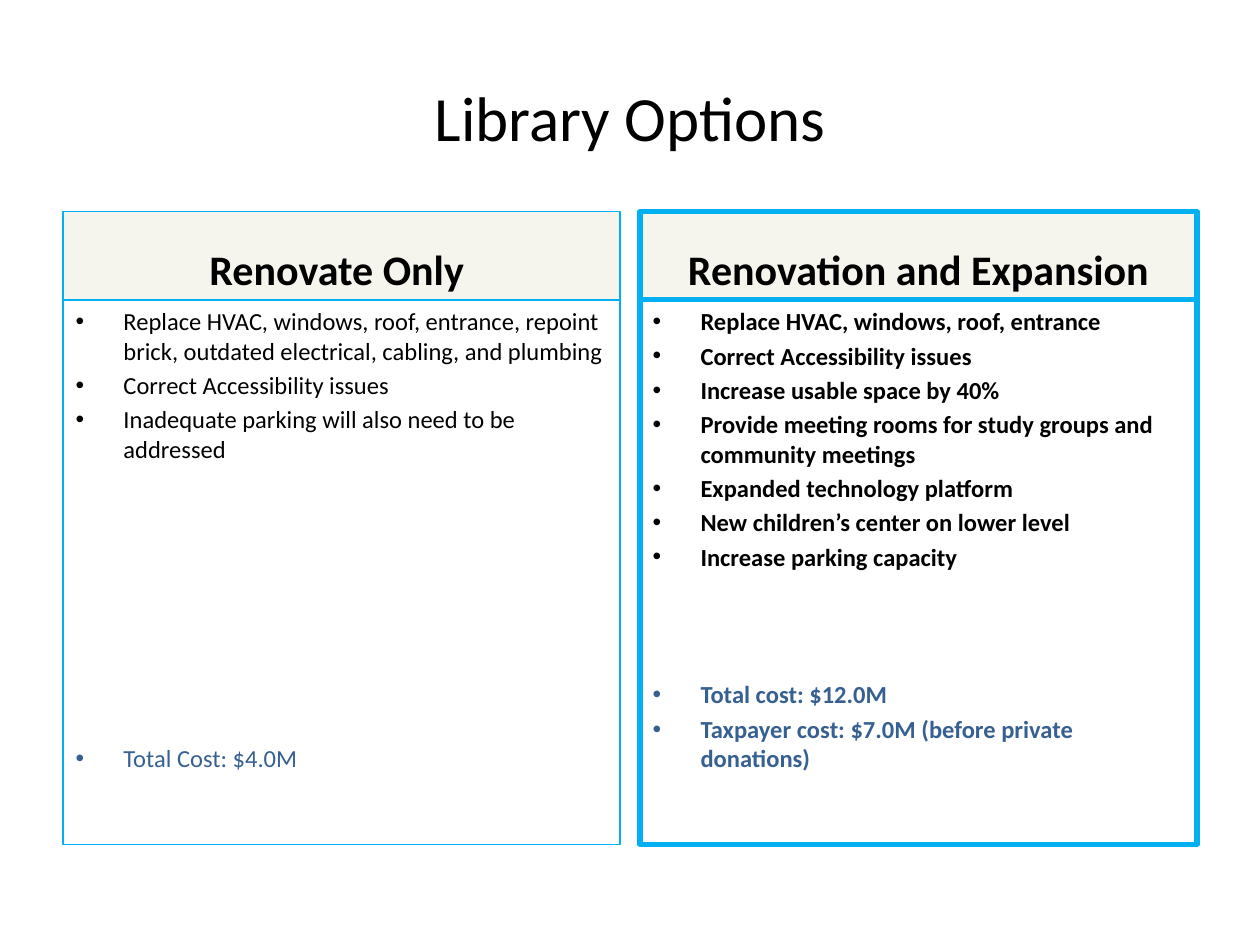
from dataclasses import dataclass

from pptx import Presentation
from pptx import util as u
from pptx.dml.color import RGBColor
from pptx.enum import text


@dataclass(frozen=True)
class Theme:
    """Holds the colours, font and type sizes."""
    font: str = "Calibri"
    ink: str = "000000"
    cost: str = "376092"
    band: str = "F5F4ED"
    border: str = "00B0F0"
    title: int = 36
    heading: int = 24
    body: int = 14


class ComparisonSlide:
    """Fills the placeholders of one comparison slide in a theme."""

    def __init__(self, deck, theme):
        self.theme = theme
        self.slide = deck.slides.add_slide(deck.slide_layouts.get_by_name("Comparison"))

    def place(self, idx, box, anchor):
        """Moves a placeholder to a box and returns it."""
        holder = self.slide.placeholders[idx]
        for side, inches in zip(("left", "top", "width", "height"), box):
            setattr(holder, side, u.Inches(inches))
        frame = {"word_wrap": True, "auto_size": text.MSO_AUTO_SIZE.NONE, "vertical_anchor": anchor}
        for name, value in frame.items():
            setattr(holder.text_frame, name, value)
        return holder

    def add_words(self, paragraph, words, size, color, bold=False, **layout):
        """Adds formatted words to a paragraph."""
        run = paragraph.add_run()
        run.text = words
        for name, value in {"name": self.theme.font, "size": u.Pt(size), "bold": bold}.items():
            setattr(run.font, name, value)
        run.font.color.rgb = RGBColor.from_string(color)
        for name, value in layout.items():
            setattr(paragraph, name, value)

    def outline(self, holder, weight):
        """Draws the border of a placeholder."""
        holder.line.color.rgb = RGBColor.from_string(self.theme.border)
        holder.line.width = u.Pt(weight)

    def title(self, words, box):
        """Sets the slide title."""
        heading = self.place(0, box, text.MSO_ANCHOR.MIDDLE)
        self.add_words(heading.text_frame.paragraphs[0], words, self.theme.title,
                       self.theme.ink, alignment=text.PP_ALIGN.CENTER)

    def header(self, idx, words, box, weight):
        """Sets the shaded heading of an option."""
        band = self.place(idx, box, text.MSO_ANCHOR.BOTTOM)
        band.fill.solid()
        band.fill.fore_color.rgb = RGBColor.from_string(self.theme.band)
        self.outline(band, weight)
        self.add_words(band.text_frame.paragraphs[0], words, self.theme.heading,
                       self.theme.ink, bold=True, alignment=text.PP_ALIGN.CENTER)

    def bullets(self, idx, works, costs, cost_gap, box, weight, bold):
        """Lists the works of an option and, after a gap, its costs."""
        scope = self.place(idx, box, text.MSO_ANCHOR.TOP)
        self.outline(scope, weight)
        hanging = u.Inches(0.38)
        for row, words in enumerate(works + costs):
            frame = scope.text_frame
            paragraph = frame.add_paragraph() if row else frame.paragraphs[0]
            color = self.theme.ink if row < len(works) else self.theme.cost
            gap = cost_gap if row == len(works) else 0.2 * self.theme.body
            self.add_words(paragraph, words, self.theme.body, color, bold, space_before=u.Pt(gap))
            for name, value in {"marL": hanging, "indent": -hanging}.items():
                paragraph._p.get_or_add_pPr().set(name, str(value))


OPTIONS = [
    {
        "name": "Renovate Only ",
        "works": [
            "Replace HVAC, windows, roof, entrance, repoint brick, outdated electrical, cabling, and plumbing",
            "Correct Accessibility issues",
            "Inadequate parking will also need to be addressed",
        ],
        "costs": ["Total Cost: $4.0M"],
        "cost_gap": 160,
        "weight": 0.75,
        "bold": False,
    },
    {
        "name": "Renovation and Expansion",
        "works": [
            "Replace HVAC, windows, roof, entrance",
            "Correct Accessibility issues",
            "Increase usable space by 40%",
            "Provide meeting rooms for study groups and community meetings",
            "Expanded technology platform",
            "New children’s center on lower level",
            "Increase parking capacity",
        ],
        "costs": ["Total cost: $12.0M", "Taxpayer cost: $7.0M (before private donations)"],
        "cost_gap": 62,
        "weight": 3,
        "bold": True,
    },
]


def main():
    """Builds the library options slide."""
    deck = Presentation()
    deck.slide_width, deck.slide_height = u.Inches(10), u.Inches(7.5)
    library = ComparisonSlide(deck, Theme())
    margin, width, top, band, depth = 0.5, 4.42, 1.68, 0.7, 4.32
    library.title("Library Options", (margin, 0.3, 9, 1.25))
    for column, option in enumerate(OPTIONS):
        left = margin + column * (9 - width)
        library.header(2 * column + 1, option["name"], (left, top, width, band), option["weight"])
        library.bullets(2 * column + 2, option["works"], option["costs"], option["cost_gap"],
                        (left, top + band, width, depth), option["weight"], option["bold"])
    deck.save("out.pptx")


if __name__ == "__main__":
    main()
